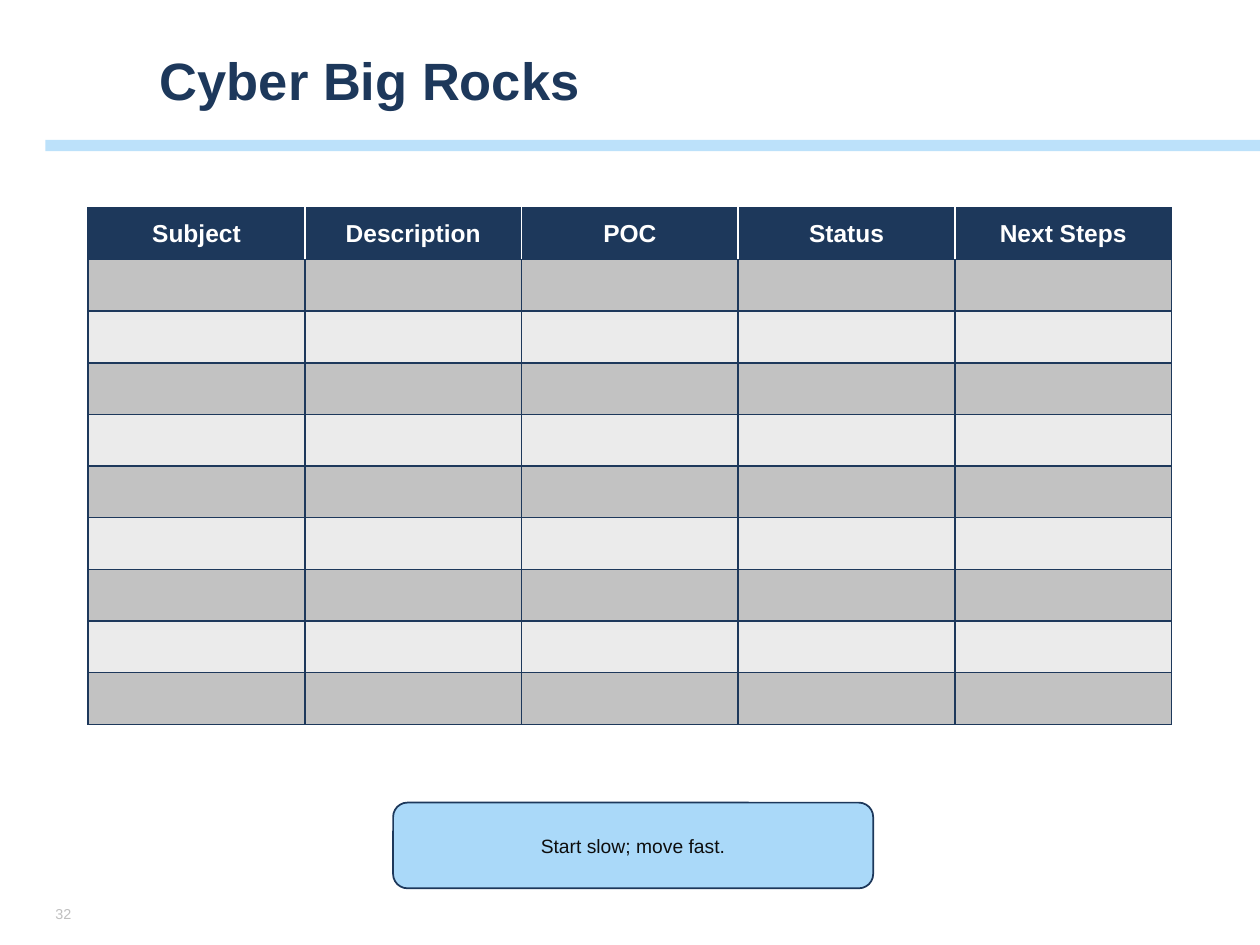
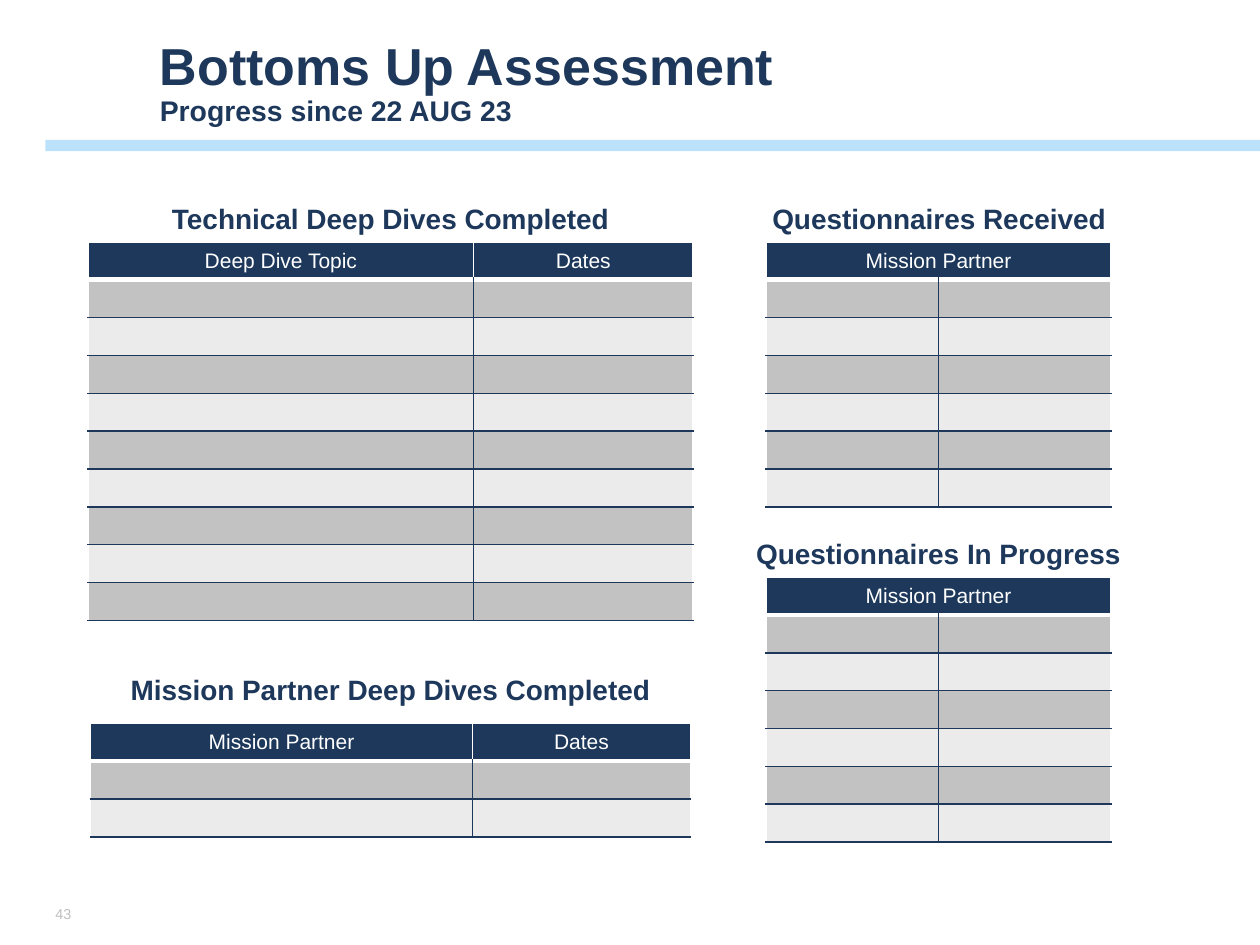
from lxml import etree
from pptx import Presentation
from pptx.dml.color import RGBColor
from pptx.enum import shapes, text
from pptx.oxml.ns import qn
from pptx.util import Inches, Pt

NAVY, WHITE, INK, PALE = "1D385B", "FFFFFF", "0D0D0D", "BFBFBF"
SKY, BANDS = "65BAF5", ("C2C2C2", "EBEBEB")
FONT = "Arial"

# Content: title lines are (text, size)
ROCKS = {
    "number": "32",
    "title": [("Cyber Big Rocks", 30)],
    "columns": ["Subject", "Description", "POC", "Status", "Next Steps"],
    "motto": "Start slow; move fast.",
}
ASSESSMENT = {
    "number": "43",
    "title": [("Bottoms Up Assessment ", 29.7), ("Progress since 22 AUG 23", 16.2)],
}
# heading, heading box, column names, table left and top, column widths, body rows
TRACKERS = [
    ("Technical Deep Dives Completed", (0.72, 1.55, 4.76, 0.37),
     ["Deep Dive Topic", "Dates"], (0.7, 1.92), (3.06, 1.74), 9),
    ("Mission Partner Deep Dives Completed", (0.7, 5.29, 4.8, 0.37),
     ["Mission Partner", "Dates"], (0.72, 5.74), (3.03, 1.73), 2),
    ("Questionnaires Received ", (5.97, 1.55, 3.03, 0.37),
     ["Mission Partner"], (6.08, 1.92), (1.37, 1.37), 6),
    ("Questionnaires In Progress ", (5.81, 4.21, 3.34, 0.37),
     ["Mission Partner"], (6.08, 4.58), (1.37, 1.37), 6),
]


def rgb(color):
    return RGBColor.from_string(color)


def style(p, size, color, bold=False, align=None):
    p.alignment = align
    for r in p.runs:
        r.font.name, r.font.size, r.font.bold = FONT, Pt(size), bold
        r.font.color.rgb = rgb(color)


def add_text(s, box, words, size, color, bold=False, align=None,
             anchor=text.MSO_ANCHOR.TOP, wrap=True):
    tf = s.shapes.add_textbox(*map(Inches, box)).text_frame
    tf.word_wrap, tf.vertical_anchor = wrap, anchor
    tf.text = words
    style(tf.paragraphs[0], size, color, bold, align)
    return tf


def add_block(s, kind, box, color, opacity):
    sp = s.shapes.add_shape(kind, *map(Inches, box))
    sp.shadow.inherit = False
    sp.fill.solid()
    sp.fill.fore_color.rgb = rgb(color)
    clr = sp.fill._xPr.find(qn("a:solidFill"))[0]
    etree.SubElement(clr, qn("a:alpha"), val=str(opacity * 1000))
    sp.line.fill.background()
    return sp


def set_borders(cell, edges):
    tcPr = cell._tc.get_or_add_tcPr()
    for side, (color, width) in zip("LRTB", edges):
        ln = etree.SubElement(tcPr, qn("a:ln" + side), w=str(Pt(width)))
        fill = etree.SubElement(ln, qn("a:solidFill"))
        etree.SubElement(fill, qn("a:srgbClr"), val=color)


def cell_edges(row, col, last, boxed):
    """Left, right, top and bottom lines; a boxed table has a navy frame."""
    outer = NAVY if boxed else WHITE
    inner = NAVY if row else WHITE
    left = inner if col else outer
    right = inner if col < last else outer
    top = NAVY if row > 1 else outer
    bottom = (NAVY, 1) if row or boxed else (WHITE, 3)
    return (left, 1), (right, 1), (top, 1), bottom


def add_grid(s, corner, widths, row_height, body_rows, names, size, bold=False, boxed=False):
    rows, cols = body_rows + 1, len(widths)
    box = (*corner, sum(widths), row_height * rows)
    table = s.shapes.add_table(rows, cols, *map(Inches, box)).table
    table.horz_banding = False
    for column, width in zip(table.columns, widths):
        column.width = Inches(width)
    for i, row in enumerate(table.rows):
        row.height = Inches(row_height)
        for j, cell in enumerate(row.cells):
            set_borders(cell, cell_edges(i, j, cols - 1, boxed))
            cell.fill.solid()
            cell.fill.fore_color.rgb = rgb(BANDS[(i - 1) % 2] if i else NAVY)
            p = cell.text_frame.paragraphs[0]
            if i == 0 and j < len(names):
                cell.vertical_anchor = text.MSO_ANCHOR.MIDDLE
                p.text = names[j]
                style(p, size, WHITE, bold, text.PP_ALIGN.CENTER)
            else:  # empty cells keep the row as low as the text size allows
                etree.SubElement(p._p, qn("a:endParaRPr"), sz=str(size * 100))
    if len(names) < cols:
        table.cell(0, len(names) - 1).merge(table.cell(0, cols - 1))


def add_slide(prs, content):
    """Blank slide with the shared band, page number and title."""
    s = prs.slides.add_slide(prs.slide_layouts[6])
    add_block(s, shapes.MSO_SHAPE.RECTANGLE, (0.36, 1.11, 9.64, 0.09), SKY, 43)
    tf = add_text(s, (0.37, 7.12, 0.32, 0.26), content["number"], 8.2, PALE,
                  anchor=text.MSO_ANCHOR.MIDDLE)
    tf.margin_left = tf.margin_right = Inches(0.07)
    tf.margin_top = tf.margin_bottom = Inches(0.04)
    lines = content["title"]
    tf = add_text(s, (1.17, 0.33, 8.61, 0.67), "", 30, NAVY, anchor=text.MSO_ANCHOR.MIDDLE)
    p = tf.paragraphs[0]
    p.text = "\v".join(words for words, _ in lines)
    style(p, 30, NAVY, True)
    p.line_spacing = 0.9
    for r, (_, size) in zip(p.runs, lines):
        r.font.size = Pt(size)
    return s


def build_rocks(prs):
    s = add_slide(prs, ROCKS)
    add_grid(s, (0.7, 1.65), [1.72] * 5, 0.41, 9, ROCKS["columns"], 14, bold=True, boxed=True)
    # Motto box
    sp = add_block(s, shapes.MSO_SHAPE.ROUNDED_RECTANGLE, (3.12, 6.37, 3.81, 0.68), SKY, 55)
    sp.line.color.rgb, sp.line.width = rgb(NAVY), Pt(1)
    sp.text_frame.text = ROCKS["motto"]
    sp.text_frame.vertical_anchor = text.MSO_ANCHOR.MIDDLE
    style(sp.text_frame.paragraphs[0], 11, INK, align=text.PP_ALIGN.CENTER)


def build_assessment(prs):
    s = add_slide(prs, ASSESSMENT)
    for heading, box, names, corner, widths, body_rows in TRACKERS:
        add_grid(s, corner, widths, 0.24, body_rows, names, 12)
        add_text(s, box, heading, 16, NAVY, True, text.PP_ALIGN.CENTER, wrap=False)


def main():
    prs = Presentation()
    prs.slide_width, prs.slide_height = Inches(10), Inches(7.5)
    build_rocks(prs)
    build_assessment(prs)
    prs.save("out.pptx")


if __name__ == "__main__":
    main()
